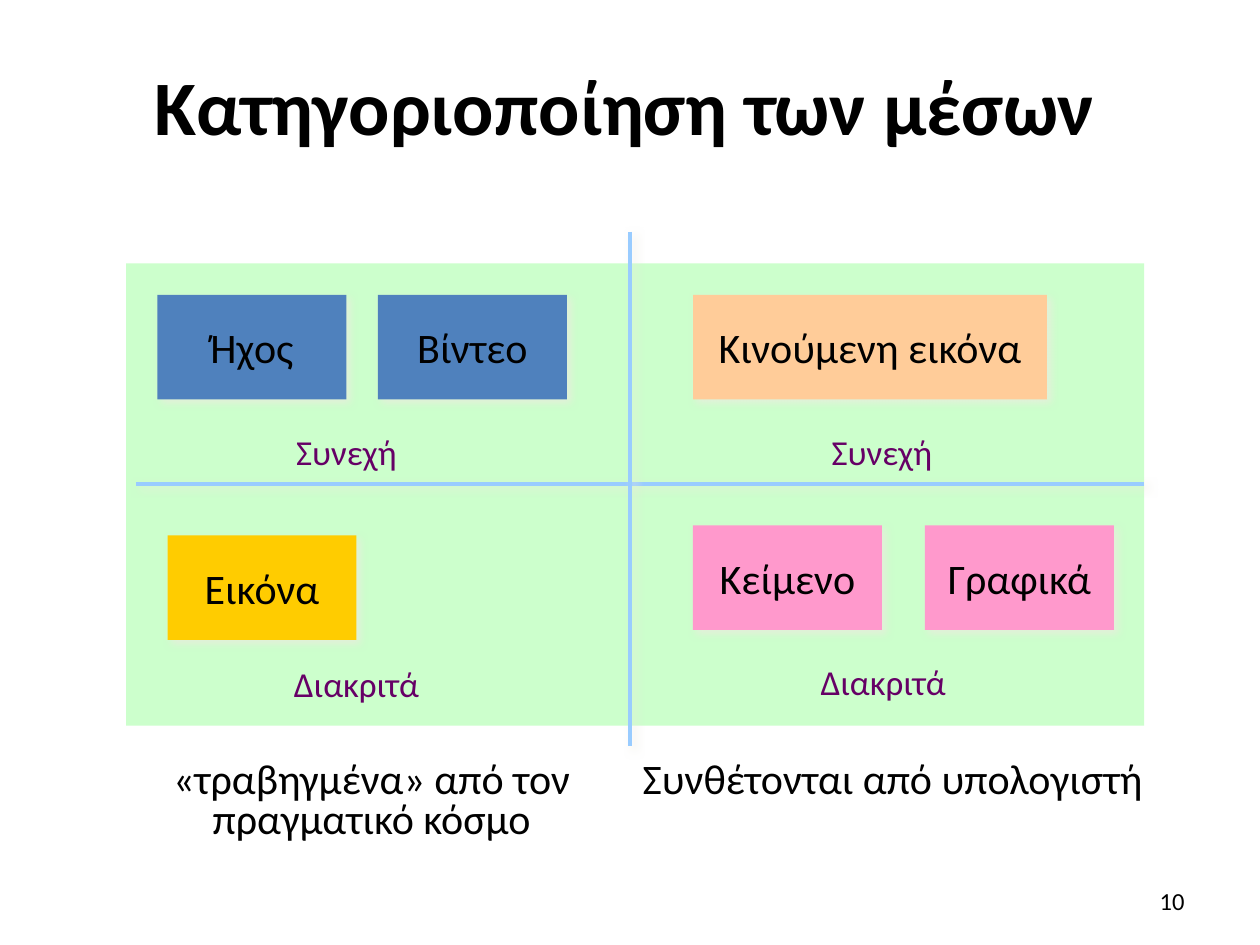
from dataclasses import dataclass

from lxml.etree import SubElement
from pptx import Presentation
from pptx.dml.color import RGBColor
from pptx.enum.shapes import MSO_CONNECTOR as Connector, MSO_SHAPE as Shape
from pptx.enum.text import MSO_ANCHOR as Anchor, MSO_AUTO_SIZE as AutoSize, PP_ALIGN as Align
from pptx.oxml.ns import qn
from pptx.util import Inches, Pt


@dataclass(frozen=True)
class Theme:
    font: str = "Calibri"
    text: str = "000000"
    label: str = "660066"
    panel: str = "CCFFCC"
    axis: str = "99CCFF"
    shadow: str = "EEECE1"
    captured: str = "4F81BD"
    still: str = "FFCC00"
    animated: str = "FFCC99"
    composed: str = "FF99CC"
    title_size: int = 44
    body_size: int = 24
    label_size: int = 20
    number_size: int = 14


THEME = Theme()
TITLE = "Κατηγοριοποίηση των μέσων"
PAGE_NUMBER = "10"

# Each quadrant: label, label position, left and top of its row, media (name, width, fill)
QUADRANTS = [
    ("Συνεχή", (2, 3.5), (1.25, 2.34),
     [("Ήχος", 1.5, THEME.captured), ("Βίντεο", 1.5, THEME.captured)]),
    ("Συνεχή", (6.25, 3.5), (5.5, 2.34),
     [("Κινούμενη εικόνα", 2.81, THEME.animated)]),
    ("Διακριτά", (2.08, 5.34), (1.33, 4.25),
     [("Εικόνα", 1.5, THEME.still)]),
    ("Διακριτά", (6.26, 5.32), (5.5, 4.17),
     [("Κείμενο", 1.5, THEME.composed), ("Γραφικά", 1.5, THEME.composed)]),
]
ORIGINS = [
    ("«τραβηγμένα» από τον πραγματικό κόσμο", (0.98, 6, 3.94, 0.76)),
    ("Συνθέτονται από υπολογιστή", (5, 6, 4.17, 0.44)),
]
PANEL = (1, 2.09, 8.08, 3.67)
AXES = [(1.08, 3.84, 9.08, 3.84), (5, 1.84, 5, 5.92)]
MEDIUM_HEIGHT = 0.83
MEDIUM_GAPS = {THEME.captured: 0.25, THEME.composed: 0.34}
LABEL_SIZE = (1.5, 0.31)


def inches(values):
    return [Inches(value) for value in values]


def write(holder, words, size, color=THEME.text, align=Align.CENTER, bold=False,
          spacing=1.0, **frame_format):
    frame = holder.text_frame
    frame.text = words
    for name, value in frame_format.items():
        setattr(frame, name, value)
    paragraph = frame.paragraphs[0]
    paragraph.alignment, paragraph.line_spacing = align, spacing
    font = paragraph.runs[0].font
    for name, value in dict(name=THEME.font, size=Pt(size), bold=bold).items():
        setattr(font, name, value)
    font.color.rgb = RGBColor.from_string(color)


def add_text(slide, box, words, size, **text_format):
    write(slide.shapes.add_textbox(*inches(box)), words, size, word_wrap=True, **text_format)


def add_box(slide, box, fill):
    shape = slide.shapes.add_shape(Shape.RECTANGLE, *inches(box))
    shape.shadow.inherit = False
    shape.fill.solid()
    shape.fill.fore_color.rgb = RGBColor.from_string(fill)
    shape.line.fill.background()
    return shape


def cast_shadow(properties):
    """Put a soft shadow, down and to the right, on a shape's or connector's spPr."""
    effects = properties.find(qn("a:effectLst"))
    if effects is None:
        effects = SubElement(properties, qn("a:effectLst"))
    shadow = SubElement(effects, qn("a:outerShdw"), blurRad=str(Pt(5)), dist=str(Pt(3)),
                        dir=str(45 * 60000), algn="ctr", rotWithShape="0")
    color = SubElement(shadow, qn("a:srgbClr"), val=THEME.shadow)
    SubElement(color, qn("a:alpha"), val="75000")


def add_axis(slide, ends):
    axis = slide.shapes.add_connector(Connector.STRAIGHT, *inches(ends))
    axis.line.color.rgb = RGBColor.from_string(THEME.axis)
    axis.line.width = Pt(2)
    cast_shadow(axis._element.spPr)


def add_media(slide, left, top, media):
    for name, width, fill in media:
        medium = add_box(slide, (left, top, width, MEDIUM_HEIGHT), fill)
        cast_shadow(medium._element.spPr)
        write(medium, name, THEME.body_size, word_wrap=False, vertical_anchor=Anchor.MIDDLE)
        left += width + MEDIUM_GAPS.get(fill, 0)


def main():
    deck = Presentation()
    deck.slide_width, deck.slide_height = inches((10, 7.5))
    slide = deck.slides.add_slide(deck.slide_layouts[5])

    title = slide.shapes.title
    title.left, title.top, title.width, title.height = inches((0.67, 0.21, 8.58, 1.25))
    write(title, TITLE, THEME.title_size, bold=True, vertical_anchor=Anchor.MIDDLE)

    add_box(slide, PANEL, THEME.panel)
    for _, _, corner, media in QUADRANTS:
        add_media(slide, *corner, media)
    for ends in AXES:
        add_axis(slide, ends)
    for words, box in ORIGINS:
        add_text(slide, box, words, THEME.body_size, spacing=0.8,
                 auto_size=AutoSize.SHAPE_TO_FIT_TEXT)
    for label, corner, _, _ in QUADRANTS:
        add_text(slide, corner + LABEL_SIZE, label, THEME.label_size, color=THEME.label,
                 spacing=0.55, auto_size=AutoSize.SHAPE_TO_FIT_TEXT)
    add_text(slide, (7.17, 6.95, 2.33, 0.4), PAGE_NUMBER, THEME.number_size,
             align=Align.RIGHT, vertical_anchor=Anchor.MIDDLE)

    deck.save("out.pptx")


if __name__ == "__main__":
    main()
